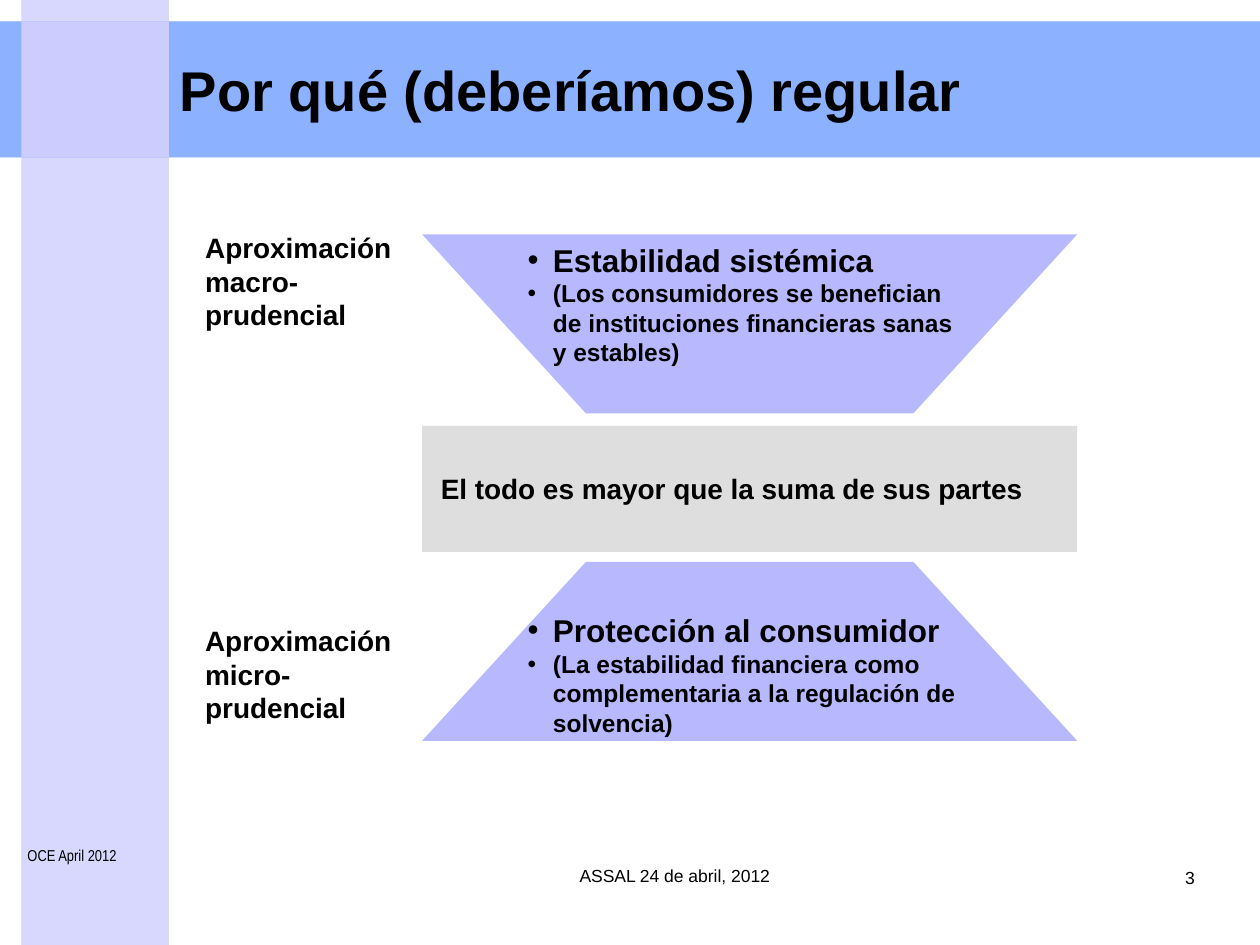
import pptx
import pptx.util
import pptx.dml.color
import pptx.enum.shapes
import pptx.enum.text
import pptx.oxml
import pptx.oxml.ns
from pptx.util import Inches

COLORS = {"text": "000000", "blue": "6699FF", "lavender": "CCCCFF",
          "trapezoid": "0000FF", "grey": "B2B2B2"}
ALIGN = pptx.enum.text.PP_ALIGN
ANCHOR = pptx.enum.text.MSO_ANCHOR


def rgb(name):
    return pptx.dml.color.RGBColor.from_string(COLORS[name])


class Deck:
    """Holds the text style and the slide being drawn."""

    font = {"name": "Arial", "size": 16, "bold": True}

    def __init__(self, width, height):
        self.prs = pptx.Presentation()
        self.prs.slide_width, self.prs.slide_height = Inches(width), Inches(height)
        self.s = self.prs.slides.add_slide(self.prs.slide_layouts[6])

    def paint(self, sp, color, opacity):
        sp.shadow.inherit = False
        sp.line.fill.background()
        sp.fill.solid()
        sp.fill.fore_color.rgb = rgb(color)
        if opacity < 100:
            clr = sp.fill._xPr.find(".//" + pptx.oxml.ns.qn("a:srgbClr"))
            clr.append(pptx.oxml.parse_xml(
                f'<a:alpha {pptx.oxml.ns.nsdecls("a")} val="{opacity * 1000}"/>'))

    def rect(self, box, color, opacity=100):
        sp = self.s.shapes.add_shape(
            pptx.enum.shapes.MSO_SHAPE.RECTANGLE, *map(Inches, box))
        self.paint(sp, color, opacity)

    def trapezoid(self, left, width, inset, long_y, short_y):
        """Trapezoid whose long side lies at long_y and short side at short_y."""
        right = left + width
        builder = self.s.shapes.build_freeform(
            Inches(left), Inches(long_y))
        points = [(left + inset, short_y), (right - inset, short_y), (right, long_y)]
        builder.add_line_segments([(Inches(x), Inches(y)) for x, y in points])
        self.paint(builder.convert_to_shape(), "trapezoid", 28)

    def text(self, box, *lines, bullets=False, align=ALIGN.LEFT,
             anchor=ANCHOR.TOP, **style):
        """Text box; each line is a string or a (string, size) pair."""
        tf = self.s.shapes.add_textbox(*map(Inches, box)).text_frame
        tf.word_wrap = True
        tf.vertical_anchor = anchor
        for i, line in enumerate(lines):
            p = tf.add_paragraph() if i else tf.paragraphs[0]
            p.alignment = align
            wording, size = line if isinstance(line, tuple) else (line, None)
            r = p.add_run()
            r.text = wording
            if bullets:
                self.bullet(p)
            fmt = {**self.font, **style}
            fmt["size"] = pptx.util.Pt(size or fmt["size"])
            for key, value in fmt.items():
                setattr(r.font, key, value)
            r.font.color.rgb = rgb("text")

    def bullet(self, p):
        pPr = p._p.get_or_add_pPr()
        for key, value in {"marL": 0.2, "indent": -0.2}.items():
            pPr.set(key, str(Inches(value)))
        ns = pptx.oxml.ns.nsdecls("a")
        for xml in (f'<a:buFont {ns} typeface="Arial"/>', f'<a:buChar {ns} char="•"/>'):
            pPr.append(pptx.oxml.parse_xml(xml))


def main():
    deck = Deck(10, 7.5)

    header = (0, 0.17, 10, 1.08), "blue", 50
    sidebar = (0.17, 0, 1.17, 7.5), "lavender", 50
    corner = (0.17, 0.17, 1.17, 1.08), "lavender"
    for band in (header, sidebar, sidebar, header, corner):
        deck.rect(*band)

    footer = {"size": 10, "bold": False}
    deck.text((1.77, 6.82, 7.17, 0.5), "ASSAL 24 de abril, 2012",
              align=ALIGN.CENTER, **footer)
    deck.text((9, 6.83, 0.58, 0.5), "3", align=ALIGN.RIGHT, **footer)
    deck.text((0.12, 6.66, 1.33, 0.55), "OCE April 2012",
              name="Arial Narrow", size=9, bold=False)
    deck.text((1.33, 0.17, 8.5, 1.08), "Por qué (deberíamos) regular",
              size=32, anchor=ANCHOR.MIDDLE)

    left, width = 3.35, 5.2
    for long_y, short_y in ((1.86, 3.28), (5.88, 4.46)):
        deck.trapezoid(left, width, width / 4, long_y, short_y)
    deck.rect((left, 3.38, width, 1), "grey", 42)
    deck.text((3.4, 3.69, 4.88, 0.37), "El todo es mayor que la suma de sus partes")

    approaches = [
        ("Aproximación macro-prudencial", 1.78, 1.81,
         "Estabilidad sistémica", 1.86, 3.7,
         "(Los consumidores se benefician de instituciones financieras sanas y estables)"),
        ("Aproximación micro-prudencial", 4.9, 1.73,
         "Protección al consumidor", 4.8, 3.86,
         "(La estabilidad financiera como complementaria a la regulación de solvencia)"),
    ]
    for label, label_y, label_w, goal, goal_y, goal_w, detail in approaches:
        deck.text((1.53, label_y, label_w, 0.91), label)
        deck.text((4.09, goal_y, goal_w, 1.11), (goal, 18), (detail, 14), bullets=True)

    deck.prs.save("out.pptx")


if __name__ == "__main__":
    main()
